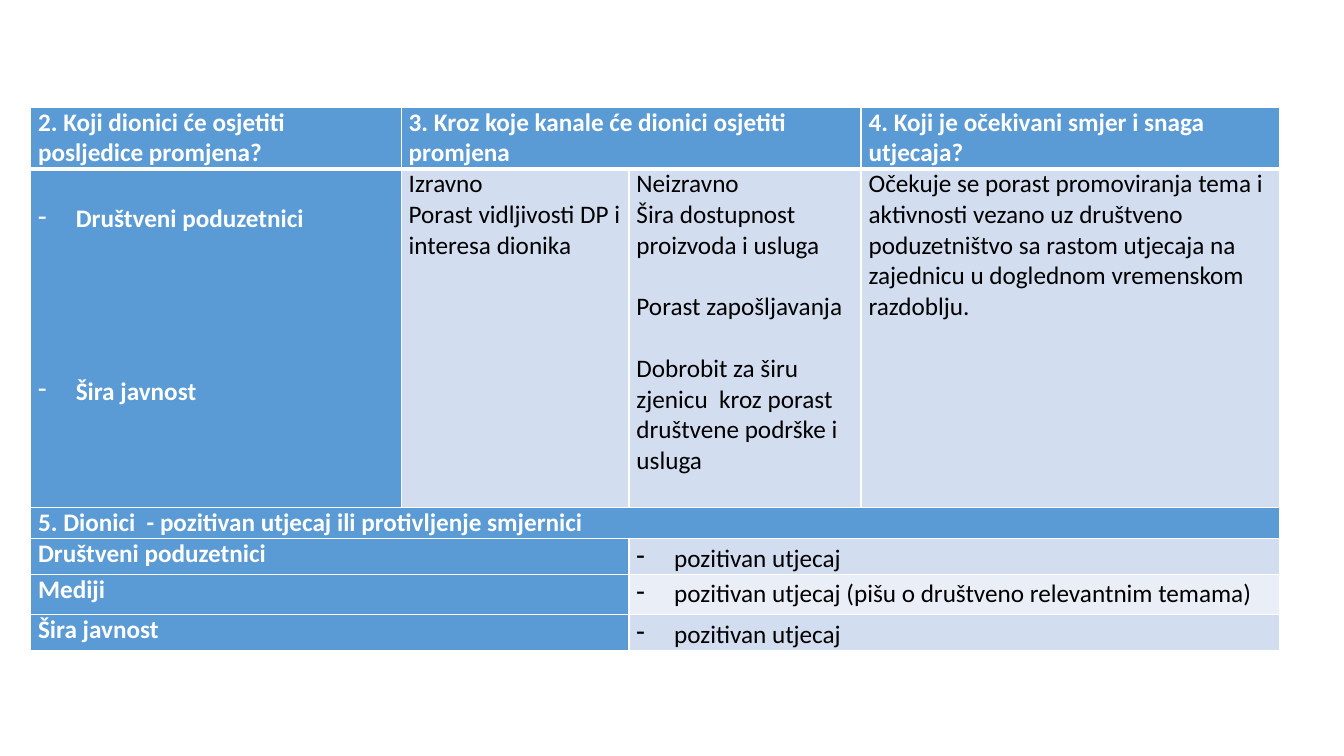
from dataclasses import dataclass

from lxml.etree import SubElement
from pptx import Presentation
from pptx.dml.color import RGBColor
from pptx.oxml.ns import qn
from pptx.table import _Cell
from pptx.text.text import TextFrame
from pptx.util import Cm, Pt


@dataclass(frozen=True)
class Theme:
    font: str = "Calibri"
    size: int = 18
    white: str = "FFFFFF"
    black: str = "000000"
    blue: str = "5B9BD5"
    band: str = "D2DEEF"
    light: str = "EAEFF7"
    thin: float = 1
    thick: float = 3


@dataclass(frozen=True)
class Para:
    text: str
    before: float = 0
    bullet: bool = False


@dataclass(frozen=True)
class Entry:
    row: int
    col: int
    paras: tuple[Para, ...]
    fill: str
    span: int = 1
    top: float = 0


T = Theme()
LINE = 22  # height in points of one line of table text
COLUMNS = (9.34, 5.74, 5.85, 10.54)
ROWS = (1.54, 8.53, 0.79, 0.9, 1.02, 0.9)


def heading(row: int, col: int, text: str, span: int = 1) -> Entry:
    return Entry(row, col, (Para(text),), T.blue, span)


def stakeholder(row: int, name: str, effect: str, fill: str) -> tuple[Entry, Entry]:
    return (heading(row, 0, name, 2),
            Entry(row, 2, (Para(effect, bullet=True),), fill, 2))


ENTRIES = (
    heading(0, 0, "2. Koji dionici će osjetiti posljedice promjena?"),
    heading(0, 1, "3. Kroz koje kanale će dionici osjetiti promjena", 2),
    heading(0, 3, "4. Koji je očekivani smjer i snaga utjecaja?"),
    Entry(1, 0, (Para("Društveni poduzetnici", bullet=True),
                 Para("Šira javnost", before=4 * LINE, bullet=True)), T.blue, top=0.77),
    Entry(1, 1, (Para("Izravno"),
                 Para("Porast vidljivosti DP i interesa dionika")), T.band),
    Entry(1, 2, (Para("Neizravno"),
                 Para("Šira dostupnost proizvoda i usluga"),
                 Para("Porast zapošljavanja", before=LINE),
                 Para("Dobrobit za širu zjenicu  kroz porast društvene podrške i usluga",
                      before=LINE)), T.band),
    Entry(1, 3, (Para("Očekuje se porast promoviranja tema i aktivnosti vezano uz "
                      "društveno poduzetništvo sa rastom utjecaja na zajednicu u "
                      "doglednom vremenskom razdoblju."),), T.band),
    heading(2, 0, "5. Dionici  - pozitivan utjecaj ili protivljenje smjernici", 4),
    *stakeholder(3, "Društveni poduzetnici", "pozitivan utjecaj", T.band),
    *stakeholder(4, "Mediji", "pozitivan utjecaj (pišu o društveno relevantnim temama)",
                 T.light),
    *stakeholder(5, "Šira javnost", "pozitivan utjecaj", T.band),
)


def add_text(tf: TextFrame, text: str, *, first: bool, color: str, bold: bool,
             before: float = 0, bullet: bool = False) -> None:
    p = tf.paragraphs[0] if first else tf.add_paragraph()
    if before:
        p.space_before = Pt(before)
    if bullet:
        p.line_spacing = 1.15
        p.space_after = Pt(10)
        pPr = p._p.get_or_add_pPr()
        pPr.set("marL", str(Cm(0.95)))
        pPr.set("indent", str(Cm(-0.95)))
        SubElement(pPr, qn("a:buChar"), char="-")
    r = p.add_run()
    r.text = text
    r.font.name = T.font
    r.font.size = Pt(T.size)
    r.font.bold = bold
    r.font.color.rgb = RGBColor.from_string(color)


def set_borders(cell: _Cell, row: int) -> None:
    """White grid, with a heavier rule under the header row."""
    widths = {"L": T.thin, "R": T.thin,
              "T": T.thick if row == 1 else T.thin,
              "B": T.thick if row == 0 else T.thin}
    tcPr = cell._tc.get_or_add_tcPr()
    for side, width in widths.items():
        ln = SubElement(tcPr, qn(f"a:ln{side}"), w=str(Pt(width)))
        SubElement(SubElement(ln, qn("a:solidFill")), qn("a:srgbClr"), val=T.white)


def fill_entry(table, entry: Entry) -> None:
    last = entry.col + entry.span - 1
    cell = table.cell(entry.row, entry.col)
    if entry.span > 1:
        cell.merge(table.cell(entry.row, last))
    for col in range(entry.col, last + 1):
        part = table.cell(entry.row, col)
        set_borders(part, entry.row)
        part.fill.solid()
        part.fill.fore_color.rgb = RGBColor.from_string(entry.fill)
    cell.margin_left = cell.margin_right = Cm(0.19)
    cell.margin_top, cell.margin_bottom = Cm(entry.top), Cm(0)
    strong = entry.fill == T.blue
    for i, para in enumerate(entry.paras):
        add_text(cell.text_frame, para.text, first=i == 0, bold=strong,
                 color=T.white if strong else T.black,
                 before=para.before, bullet=para.bullet)


def main() -> None:
    prs = Presentation()
    prs.slide_width, prs.slide_height = Cm(33.87), Cm(19.05)
    s = prs.slides.add_slide(prs.slide_layouts[6])
    table = s.shapes.add_table(len(ROWS), len(COLUMNS), Cm(0.77), Cm(2.7),
                               Cm(sum(COLUMNS)), Cm(sum(ROWS))).table
    for column, width in zip(table.columns, COLUMNS):
        column.width = Cm(width)
    for row, height in zip(table.rows, ROWS):
        row.height = Cm(height)
    for entry in ENTRIES:
        fill_entry(table, entry)
    prs.save("out.pptx")


if __name__ == "__main__":
    main()
